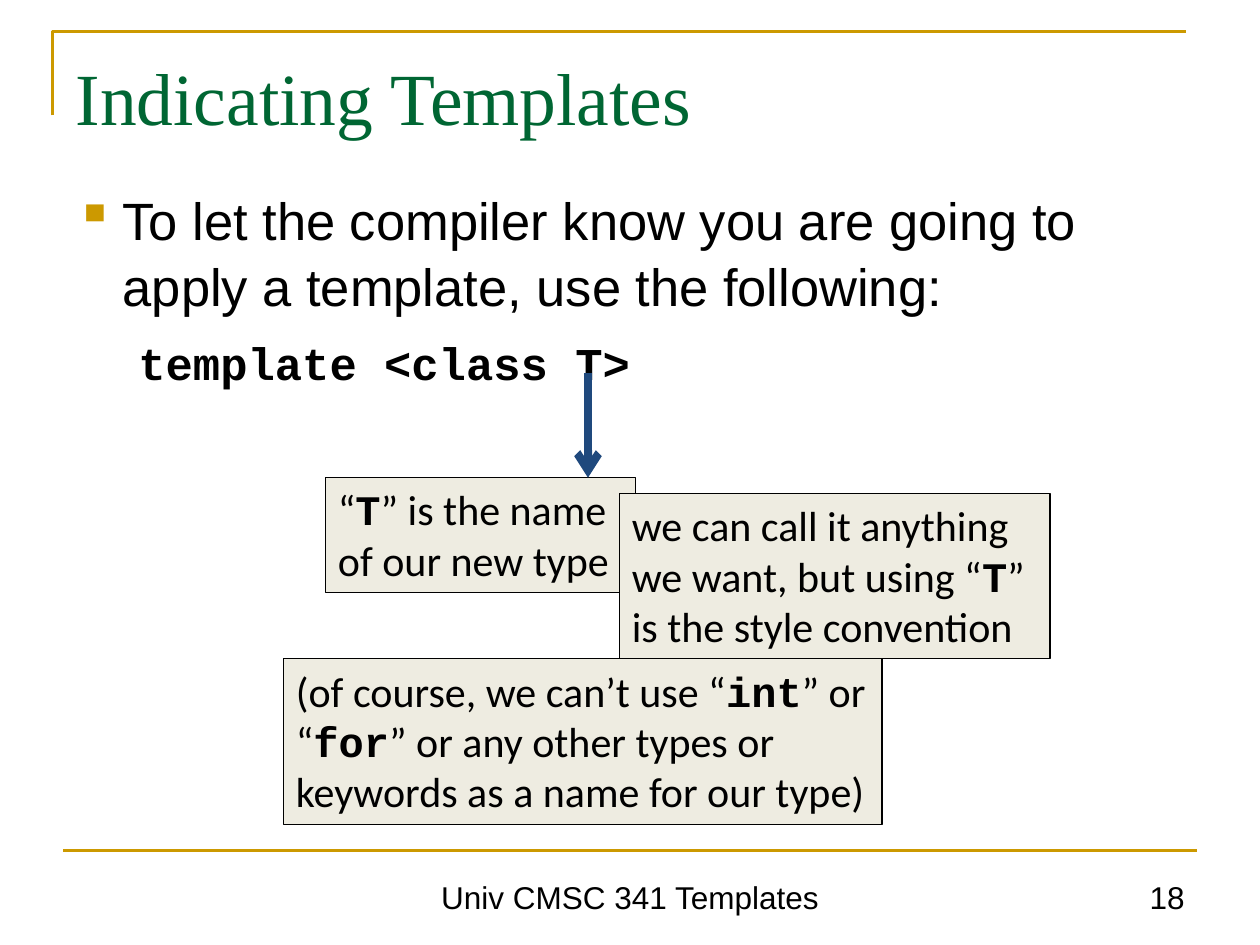
from lxml import etree
from pptx import Presentation
from pptx.dml.color import RGBColor
from pptx.enum import shapes, text
from pptx.oxml import ns
from pptx.util import Pt

GOLD = RGBColor(0xCC, 0x99, 0x00)
GREEN = RGBColor(0x00, 0x66, 0x33)
BLACK = RGBColor(0, 0, 0)
CREAM = RGBColor(0xEE, 0xEC, 0xE1)
NAVY = RGBColor(0x1F, 0x49, 0x7D)
LEFT, MID, RIGHT = text.PP_ALIGN.LEFT, text.PP_ALIGN.CENTER, text.PP_ALIGN.RIGHT
TOP, BOTTOM = text.MSO_ANCHOR.TOP, text.MSO_ANCHOR.BOTTOM
CODE = "Courier New"

# Content: boxes are left, top, width, height in points
TITLE = "Indicating Templates"
LEAD = "To let the compiler know you are going to apply a template, use the following:"
SAMPLE = "template <class T>"
FOOT = [
    ("Univ CMSC 341 Templates", (126, 492, 468, 35), MID),
    ("18", (516, 492, 168, 35), RIGHT),
]
# Backticks mark code words
NOTES = [
    ("“`T`” is the name of our new type", (186, 273, 177, 65.8)),
    ("we can call it anything we want, but using “`T`” is the style convention",
     (354, 282, 246, 94.5)),
    ("(of course, we can’t use “`int`” or “`for`” or any other types or "
     "keywords as a name for our type)", (162, 376.5, 342, 94.5)),
]

deck = Presentation()
deck.slide_width, deck.slide_height = Pt(720), Pt(540)
page = deck.slides.add_slide(deck.slide_layouts[5])
items = page.shapes


def style(run, face, size, color=BLACK, bold=False):
    font = run.font
    font.name, font.size, font.bold = face, Pt(size), bold
    font.color.rgb = color


def setup(frame, anchor=TOP, top=3.6):
    frame.word_wrap = True
    frame.auto_size = text.MSO_AUTO_SIZE.NONE
    frame.vertical_anchor = anchor
    frame.margin_left = frame.margin_right = Pt(7.2)
    frame.margin_top, frame.margin_bottom = Pt(top), Pt(3.6)


def write(par, words, face, size, color=BLACK, bold=False, align=LEFT):
    par.text = words
    par.alignment = align
    style(par.runs[0], face, size, color, bold)


def line(start, end, color, width):
    wire = items.add_connector(
        shapes.MSO_CONNECTOR.STRAIGHT, *map(Pt, start + end))
    wire.line.color.rgb, wire.line.width = color, Pt(width)
    props = wire.line._get_or_add_ln()
    etree.SubElement(wire._element.spPr, ns.qn("a:effectLst"))
    return props


# Gold frame: corner at the top, rule at the foot
pen = items.build_freeform(Pt(30), Pt(66), scale=1.0)
pen.add_line_segments([(Pt(30), Pt(18)), (Pt(678), Pt(18))], close=False)
edge = pen.convert_to_shape()
edge.shadow.inherit = False
edge.fill.background()
edge.line.color.rgb, edge.line.width = GOLD, Pt(1.5)
line((36, 486), (684, 486), GOLD, 1.5)

# Title
head = items.title
head.left, head.top, head.width, head.height = map(Pt, (36, 21.6, 647, 80))
setup(head.text_frame, top=8)
write(head.text_frame.paragraphs[0], TITLE, "Times New Roman", 42, GREEN)

# Body: bulleted lead, then the code sample
body = items.add_textbox(*map(Pt, (36, 102, 647, 380))).text_frame
setup(body)
lead = body.paragraphs[0]
write(lead, LEAD, "Arial", 30)
lead.line_spacing = 1.05
props = lead._p.get_or_add_pPr()
props.set("marL", str(Pt(27)))
props.set("indent", str(Pt(-27)))
tint = etree.SubElement(props, ns.qn("a:buClr"))
etree.SubElement(tint, ns.qn("a:srgbClr"), val=str(GOLD))
etree.SubElement(props, ns.qn("a:buChar"), char="▪")

code = body.add_paragraph()
write(code, SAMPLE, CODE, 26, bold=True)
code.space_before, code.line_spacing = Pt(9), 1.05
code._p.get_or_add_pPr().set("marL", str(Pt(36)))

# Footer and page number
for words, box, align in FOOT:
    frame = items.add_textbox(*map(Pt, box)).text_frame
    setup(frame, BOTTOM)
    write(frame.paragraphs[0], words, "Arial", 18, align=align)

# Notes, with the arrow drawn over the first one
for i, (words, box) in enumerate(NOTES):
    note = items.add_shape(shapes.MSO_SHAPE.RECTANGLE, *map(Pt, box))
    note.shadow.inherit = False
    note.fill.solid()
    note.fill.fore_color.rgb = CREAM
    note.line.color.rgb, note.line.width = BLACK, Pt(0.75)
    setup(note.text_frame)
    par = note.text_frame.paragraphs[0]
    par.alignment = LEFT
    for n, part in enumerate(words.split("`")):
        run = par.add_run()
        run.text = part
        style(run, CODE if n % 2 else "Calibri", 24, bold=n % 2 == 1)
    if i == 0:
        arrow = line((336, 213), (336, 273), NAVY, 4.5)
        etree.SubElement(arrow, ns.qn("a:tailEnd"), type="arrow")

deck.save("out.pptx")
